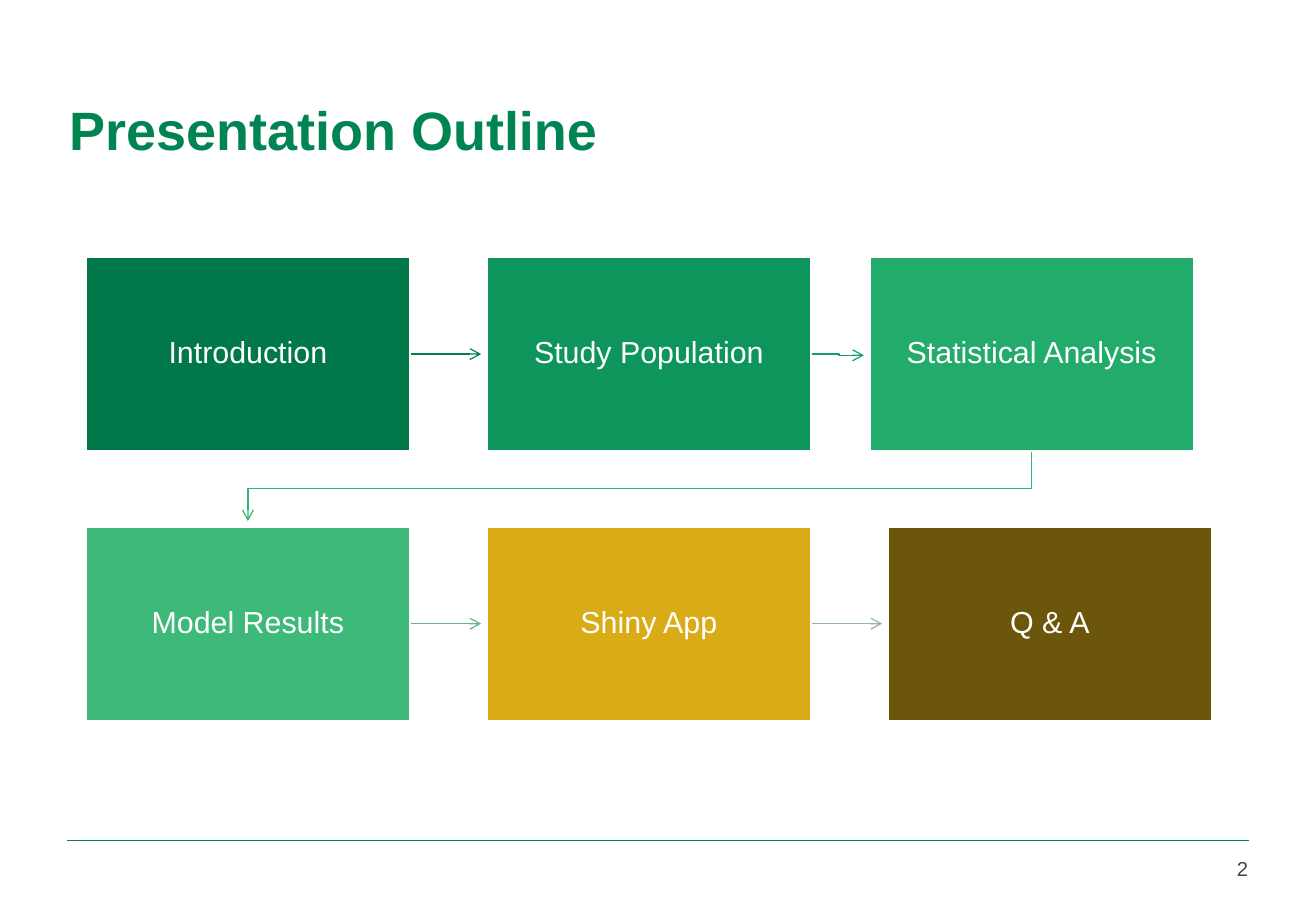
from lxml import etree
from pptx import Presentation
from pptx import util as u
from pptx.dml.color import RGBColor
from pptx.enum import shapes, text
from pptx.oxml import ns

THEME = {
    "font": "Arial", "title": 32, "label": 18, "number": 12,
    "green": "008452", "grey": "3F4548", "white": "FFFFFF",
}

# Grid of topic boxes, in inches
LEFT, TOP = 0.7, 2.11
COLUMN, ROW = 3.3, 2.22
BOX_WIDTH, BOX_HEIGHT = 2.68, 1.61
ARROW_GAP = 0.04

# Label, fill, shift from the grid column, colour of the outgoing arrow
TOPICS = [
    [("Introduction", "00784A", 0, "007E4E"),
     ("Study Population", "0D955B", 0, "129F62"),
     ("Statistical Analysis", "22AB6B", -0.15, "2FB573")],
    [("Model Results", "3DB97A", 0, "5FB887"),
     ("Shiny App", "D9AB16", 0, "95B5A2"),
     ("Q & A", "6C560B", 0, None)],
]

presentation = Presentation()
presentation.slide_width, presentation.slide_height = u.Inches(10.83), u.Inches(7.5)
slide = presentation.slides.add_slide(presentation.slide_layouts[6])


def write(shape, words, size, color, align, bold=False):
    frame = shape.text_frame
    frame.word_wrap = True
    paragraph = frame.paragraphs[0]
    paragraph.text = words
    paragraph.alignment = align
    paragraph.font.name = THEME["font"]
    paragraph.font.size = u.Pt(size)
    paragraph.font.bold = bold
    paragraph.font.color.rgb = RGBColor.from_string(color)
    return frame, paragraph


def draw_line(points, color, width, arrow=True):
    points = [(u.Inches(x), u.Inches(y)) for x, y in points]
    if len(points) == 2:
        shape = slide.shapes.add_connector(
            shapes.MSO_CONNECTOR.STRAIGHT, *points[0], *points[1])
    else:
        builder = slide.shapes.build_freeform(*points[0])
        builder.add_line_segments(points[1:], close=False)
        shape = builder.convert_to_shape()
        shape.fill.background()
    shape.line.color.rgb = RGBColor.from_string(color)
    shape.line.width = u.Pt(width)
    if arrow:
        outline = shape.line._get_or_add_ln()
        etree.SubElement(outline, ns.qn("a:tailEnd"), type="arrow")
    etree.SubElement(shape._element.spPr, ns.qn("a:effectLst"))


# Title
title = slide.shapes.add_textbox(
    u.Inches(0.47), u.Inches(0.44), u.Inches(9.82), u.Inches(1.25))
frame, _ = write(title, "Presentation Outline", THEME["title"], THEME["green"],
                 text.PP_ALIGN.LEFT, bold=True)
frame.vertical_anchor = text.MSO_ANCHOR.MIDDLE

# Topic boxes and the arrows between them
for row, topics in enumerate(TOPICS):
    top = TOP + row * ROW
    middle = top + BOX_HEIGHT / 2
    for column, (label, fill, shift, arrow_color) in enumerate(topics):
        left = LEFT + column * COLUMN + shift
        right = left + BOX_WIDTH
        box = slide.shapes.add_shape(
            shapes.MSO_SHAPE.RECTANGLE, u.Inches(left), u.Inches(top),
            u.Inches(BOX_WIDTH), u.Inches(BOX_HEIGHT))
        box.shadow.inherit = False
        box.fill.solid()
        box.fill.fore_color.rgb = RGBColor.from_string(fill)
        box.line.color.rgb = RGBColor.from_string(THEME["white"])
        box.line.width = u.Pt(2)
        frame, paragraph = write(box, label, THEME["label"], THEME["white"],
                                 text.PP_ALIGN.CENTER)
        frame.vertical_anchor = text.MSO_ANCHOR.MIDDLE
        frame.margin_left = frame.margin_right = u.Inches(0.14)
        frame.margin_top = frame.margin_bottom = u.Inches(0.14)
        paragraph.line_spacing = 0.9

        if column < 2:
            end = LEFT + (column + 1) * COLUMN + topics[column + 1][2] - ARROW_GAP
            points = [(right, middle), (end, middle)]
            if topics[column + 1][2]:  # small step towards the shifted box
                bend = (right + end) / 2 + 0.01
                points[1:] = [(bend, middle), (bend, middle + 0.01), (end, middle + 0.01)]
            draw_line(points, arrow_color, 0.75)
        elif arrow_color:  # return to the start of the next row
            start, end = left + BOX_WIDTH / 2, LEFT + BOX_WIDTH / 2
            bottom, below = top + BOX_HEIGHT, top + ROW
            turn = (bottom + below) / 2
            draw_line([(start, bottom), (start, turn), (end, turn),
                       (end, below - ARROW_GAP)], arrow_color, 0.75)

# Footer rule and slide number
draw_line([(0.55, 6.92), (10.28, 6.92)], THEME["green"], 1, arrow=False)
number = slide.shapes.add_textbox(
    u.Inches(9.6), u.Inches(7), u.Inches(0.77), u.Inches(0.37))
write(number, "2", THEME["number"], THEME["grey"], text.PP_ALIGN.RIGHT)

presentation.save("out.pptx")
